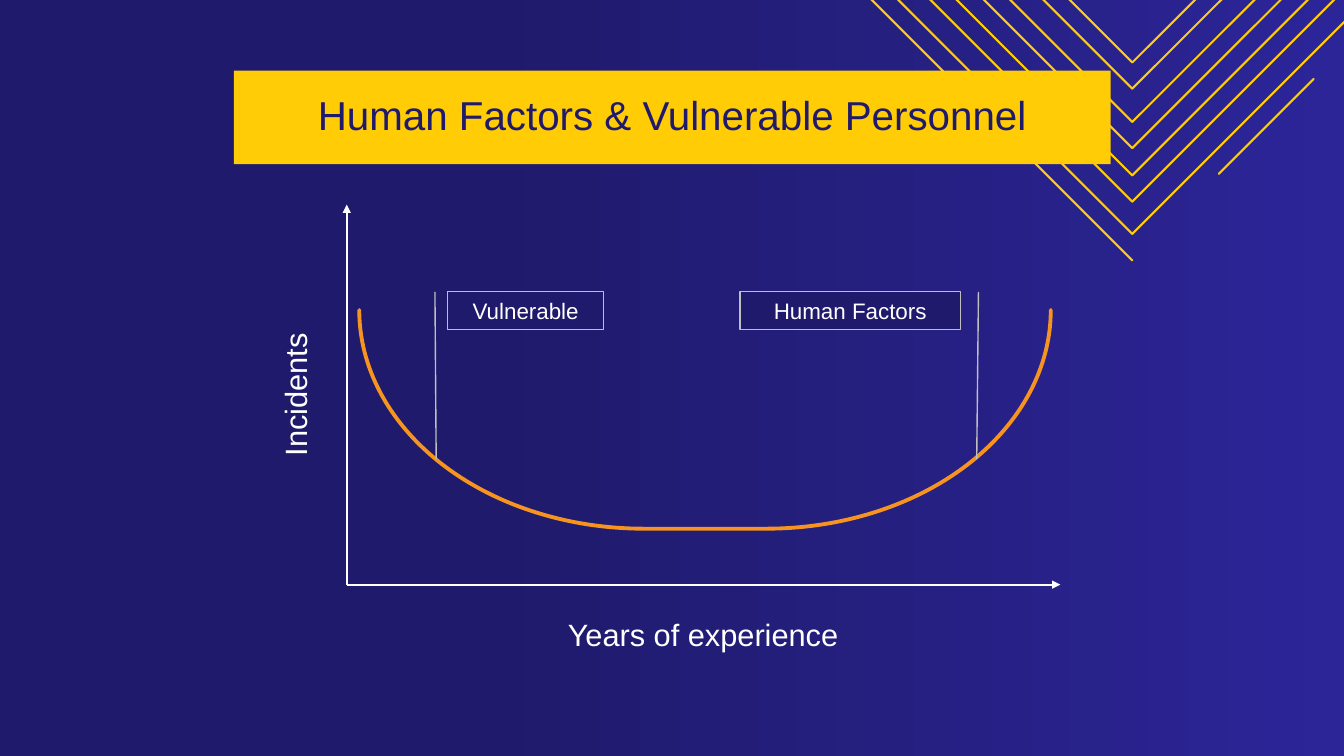
from dataclasses import dataclass

from lxml import etree
from pptx import Presentation
from pptx.dml.color import RGBColor
from pptx.enum.shapes import MSO_CONNECTOR, MSO_SHAPE
from pptx.enum.text import MSO_ANCHOR, PP_ALIGN
from pptx.oxml.ns import qn
from pptx.util import Emu, Pt

STRAIGHT = MSO_CONNECTOR.STRAIGHT
RECTANGLE = MSO_SHAPE.RECTANGLE
BRACKET = MSO_SHAPE.LEFT_BRACKET
CALLOUT = MSO_SHAPE.LINE_CALLOUT_1
MIDDLE = MSO_ANCHOR.MIDDLE
CENTER = PP_ALIGN.CENTER

COLUMNS, ROWS = 160, 90
CELL = 76200
NAVY, INDIGO = "1F1A6B", "2C2598"
YELLOW, ORANGE = "FFCC05", "F7931F"
WHITE, GREY = "FFFFFF", "BFBFBF"
FONT = "Arial"

CHEVRON_X, CHEVRON_TOP = 134.8, -1.1
CHEVRON_TIPS = (7.44, 10.56, 14.52, 17.64, 20.88, 24, 27.84)
HALF_CHEVRON_TIP = 31


@dataclass(frozen=True)
class Area:
    column: float
    row: float
    width: float
    height: float


@dataclass(frozen=True)
class Segment:
    start: tuple[float, float]
    end: tuple[float, float]
    color: str
    arrow: bool = False


@dataclass(frozen=True)
class AxisTitle:
    text: str
    area: Area
    rotation: float


@dataclass(frozen=True)
class Marker:
    text: str
    area: Area
    flipped: bool


ORIGIN = (41.28, 69.6)
AXES = (
    Segment((41.28, 24.36), ORIGIN, WHITE, True),
    Segment((126.24, 69.6), ORIGIN, WHITE, True),
)
AXIS_TITLES = (
    AxisTitle("Incidents", Area(17.64, 44.04, 36.24, 5.88), 270),
    AxisTitle("Years of experience", Area(59.64, 73.2, 48.12, 5.88), 0),
)
MARKERS = (
    Marker("Vulnerable", Area(53.28, 34.68, 18.6, 4.56), False),
    Marker("Human Factors", Area(88.08, 34.68, 26.28, 4.56), True),
)


def cells(count: float) -> Emu:
    return Emu(round(count * CELL))


def place(area: Area) -> tuple:
    return tuple(map(cells, (area.column, area.row, area.width, area.height)))


def rgb(color: str) -> RGBColor:
    return RGBColor.from_string(color)


def paint(shape, fill: str | None, line: str | None, width: float = 1) -> None:
    shape.shadow.inherit = False
    if fill:
        shape.fill.solid()
        shape.fill.fore_color.rgb = rgb(fill)
    else:
        shape.fill.background()
    if line:
        shape.line.color.rgb = rgb(line)
        shape.line.width = Pt(width)
    else:
        shape.line.fill.background()


def write(shape, text: str, size: float, color: str):
    frame = shape.text_frame
    frame.word_wrap = True
    frame.text = text
    para = frame.paragraphs[0]
    para.alignment = CENTER
    font = para.runs[0].font
    font.name, font.size = FONT, Pt(size)
    font.color.rgb = rgb(color)
    return frame


def draw_segment(page, segment: Segment) -> None:
    ends = map(cells, (*segment.start, *segment.end))
    line = page.shapes.add_connector(STRAIGHT, *ends)
    line.line.color.rgb = rgb(segment.color)
    line.line.width = Pt(1.5)
    if segment.arrow:
        outline = line.line._get_or_add_ln()
        etree.SubElement(outline, qn("a:headEnd"), type="triangle")
    else:
        line.line._get_or_add_ln().set("cap", "rnd")
    etree.SubElement(line._element.spPr, qn("a:effectLst"))


def draw_chevrons(page) -> None:
    arms = [(tip, side) for tip in CHEVRON_TIPS for side in (-1, 1)]
    arms.append((HALF_CHEVRON_TIP, -1))
    for tip, side in arms:
        start = (CHEVRON_X + side * (tip - CHEVRON_TOP), CHEVRON_TOP)
        draw_segment(page, Segment(start, (CHEVRON_X, tip), YELLOW))
    draw_segment(page, Segment((156.4, 9.4), (145.1, 20.7), YELLOW))


def draw_title(page) -> None:
    box = page.shapes.add_shape(RECTANGLE, *place(Area(27.84, 8.4, 104.4, 11.16)))
    paint(box, YELLOW, None)
    frame = write(box, "Human Factors & Vulnerable Personnel", 28.8, NAVY)
    frame.vertical_anchor = MIDDLE
    frame.margin_left = frame.margin_right = cells(3.72)
    frame.paragraphs[0].line_spacing = 0.9


def draw_axis_title(page, title: AxisTitle) -> None:
    box = page.shapes.add_textbox(*place(title.area))
    box.rotation = title.rotation
    para = write(box, title.text, 22, WHITE).paragraphs[0]
    para.line_spacing = 0.9
    para.space_before = Pt(10)


def draw_curve(page) -> None:
    curve = page.shapes.add_shape(BRACKET, *place(Area(70.92, 8.76, 26.04, 82.32)))
    curve.rotation = 270
    curve.adjustments[0] = 1.3
    paint(curve, None, ORANGE, 2.75)
    curve.line._get_or_add_ln().set("cap", "rnd")


def draw_marker(page, marker: Marker) -> None:
    box = page.shapes.add_shape(CALLOUT, *place(marker.area))
    for index, value in enumerate((0.017, -0.081, 4.381, -0.073)):
        box.adjustments[index] = value
    if marker.flipped:
        box._element.spPr.find(qn("a:xfrm")).set("flipH", "1")
    paint(box, NAVY, GREY)
    write(box, marker.text, 16, WHITE).vertical_anchor = MIDDLE


def main() -> None:
    deck = Presentation()
    deck.slide_width, deck.slide_height = cells(COLUMNS), cells(ROWS)
    page = deck.slides.add_slide(deck.slide_layouts[6])
    backdrop = page.background.fill
    backdrop.gradient()
    backdrop.gradient_angle = 0
    for stop, position, color in zip(backdrop.gradient_stops, (0.36, 1), (NAVY, INDIGO)):
        stop.position = position
        stop.color.rgb = rgb(color)
    draw_chevrons(page)
    draw_title(page)
    for title in AXIS_TITLES:
        draw_axis_title(page, title)
    for axis in AXES:
        draw_segment(page, axis)
    draw_curve(page)
    for marker in MARKERS:
        draw_marker(page, marker)
    deck.save("out.pptx")


if __name__ == "__main__":
    main()
